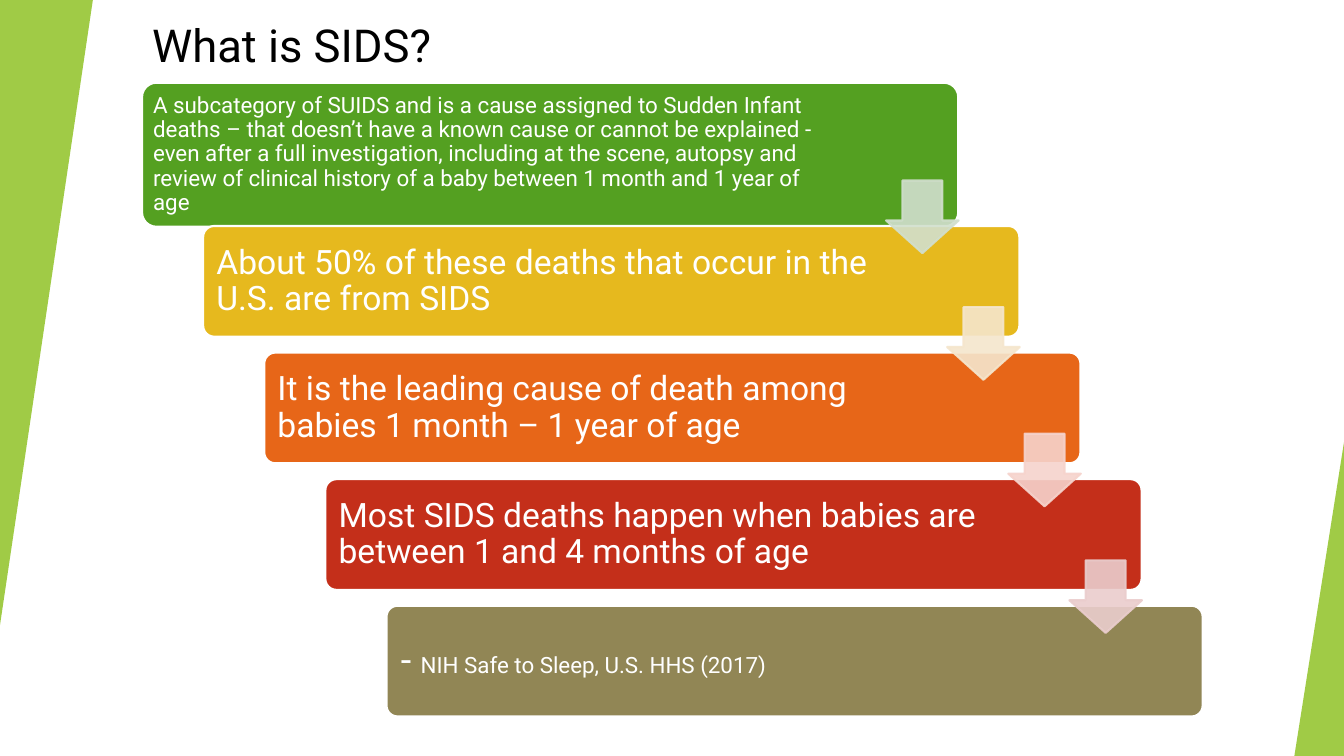
from dataclasses import dataclass

from lxml.etree import SubElement
from pptx import Presentation
from pptx.dml.color import RGBColor
from pptx.dml.fill import FillFormat
from pptx.enum.shapes import MSO_SHAPE
from pptx.enum.text import MSO_ANCHOR, MSO_AUTO_SIZE, PP_ALIGN
from pptx.oxml.ns import qn
from pptx.shapes.autoshape import Shape
from pptx.slide import Slide
from pptx.text.text import Font
from pptx.util import Cm, Pt

FONT = "Roboto"
COLORS = {
    "white": "FFFFFF", "black": "000000", "lime": "90C226",
    "green": "54A021", "gold": "E6B91E", "orange": "E76618",
    "red": "C42F1A", "olive": "918655",
    "pale green": "D1DFCD", "pale gold": "F5E6CD",
    "pale orange": "F6D3CC", "pale red": "EACDCD",
}
# Cards descend like stairs; all lengths are in cm.
LEFT, MIDDLE = 3.58, 3.9
STEP_X, STEP_Y = 1.54, 3.19
CARD_WIDTH, TEXT_WIDTH = 20.57, 17.05
ARROW_LEFT, ARROW_TOP, ARROW_SIZE = 22.33, 4.55, 1.83


@dataclass
class Card:
    color: str
    texts: list[tuple[str, float]]
    height: float = 2.79
    inset: float = 0.25


@dataclass
class Wedge:
    left: float
    top: float
    width: float
    height: float
    turn: int


CARDS = [
    Card("green", [("A subcategory of SUIDS and is a cause assigned to Sudden Infant "
                    "deaths – that doesn’t have a known cause or cannot be explained - "
                    "even after a full investigation, including at the scene, autopsy "
                    "and review of clinical history of a baby between 1 month and "
                    "1 year of age", 16)], height=3.63, inset=0.17),
    Card("gold", [("About 50% of these deaths that occur in the U.S. are from SIDS", 24)]),
    Card("orange", [("It is the leading cause of death among babies "
                     "1 month – 1 year of age", 24)]),
    Card("red", [("Most SIDS deaths happen when babies are between "
                  "1 and 4 months of age", 24)]),
    Card("olive", [("- ", 27), ("NIH Safe to Sleep, U.S. HHS (2017)", 16)], inset=0.28),
]
ARROWS = ["pale green", "pale gold", "pale orange", "pale red"]
WEDGES = [Wedge(0, 0, 2.34, 15.75, 180), Wedge(32.62, 11.15, 1.25, 7.9, 0)]


def paint(fill: FillFormat, color: str, alpha: int = 100) -> None:
    """Fill with a solid colour; alpha is the opacity in percent."""
    fill.solid()
    fill.fore_color.rgb = RGBColor.from_string(COLORS[color])
    if alpha < 100:
        node = fill._xPr.find(qn("a:solidFill"))[0]
        SubElement(node, qn("a:alpha"), val=str(alpha * 1000))


def style(font: Font, size: float, color: str) -> None:
    font.name = FONT
    font.size = Pt(size)
    font.color.rgb = RGBColor.from_string(COLORS[color])


def add_shape(slide: Slide, kind: MSO_SHAPE, box: tuple[float, ...],
              color: str, alpha: int = 100) -> Shape:
    shape = slide.shapes.add_shape(kind, *map(Cm, box))
    shape.shadow.inherit = False
    paint(shape.fill, color, alpha)
    shape.line.fill.background()
    return shape


def outline(shape: Shape, color: str, alpha: int = 100) -> None:
    shape.line.width = Pt(1.5)
    paint(shape.line.fill, color, alpha)


def add_title(slide: Slide) -> None:
    title = slide.shapes.title
    title.left, title.top, title.width, title.height = map(Cm, (3.58, 0.33, 28.32, 1.6))
    frame = title.text_frame
    frame.text = "What is SIDS?"
    frame.auto_size = MSO_AUTO_SIZE.NONE
    frame.vertical_anchor = MSO_ANCHOR.MIDDLE
    frame.paragraphs[0].alignment = PP_ALIGN.LEFT
    style(frame.paragraphs[0].runs[0].font, 32.4, "black")


def add_wedge(slide: Slide, wedge: Wedge) -> None:
    box = (wedge.left, wedge.top, wedge.width, wedge.height)
    shape = add_shape(slide, MSO_SHAPE.ISOSCELES_TRIANGLE, box, "lime", 85)
    shape.adjustments[0] = 1
    shape.rotation = wedge.turn


def add_card(slide: Slide, card: Card, index: int) -> None:
    left = LEFT + index * STEP_X
    top = MIDDLE + index * STEP_Y - card.height / 2
    shape = add_shape(slide, MSO_SHAPE.ROUNDED_RECTANGLE,
                      (left, top, CARD_WIDTH, card.height), card.color)
    shape.adjustments[0] = 0.1
    outline(shape, "white")

    pad = card.height * 0.03
    label = slide.shapes.add_textbox(Cm(left + pad), Cm(top + pad),
                                     Cm(TEXT_WIDTH), Cm(card.height - 2 * pad))
    frame = label.text_frame
    frame.word_wrap = True
    frame.vertical_anchor = MSO_ANCHOR.MIDDLE
    frame.margin_left = frame.margin_right = Cm(card.inset)
    frame.margin_top = frame.margin_bottom = Cm(card.inset)
    line = frame.paragraphs[0]
    line.line_spacing = 0.9
    for text, size in card.texts:
        run = line.add_run()
        run.text = text
        style(run.font, size, "white")


def add_arrow(slide: Slide, color: str, index: int) -> None:
    box = (ARROW_LEFT + index * STEP_X, ARROW_TOP + index * STEP_Y,
           ARROW_SIZE, ARROW_SIZE)
    arrow = add_shape(slide, MSO_SHAPE.DOWN_ARROW, box, color, 90)
    arrow.adjustments[0] = 0.55
    arrow.adjustments[1] = 0.45
    outline(arrow, color, 90)


def main() -> None:
    deck = Presentation()
    deck.slide_width, deck.slide_height = Cm(33.87), Cm(19.05)
    slide = deck.slides.add_slide(deck.slide_layouts.get_by_name("Title Only"))
    add_title(slide)
    for wedge in WEDGES:
        add_wedge(slide, wedge)
    for index, card in enumerate(CARDS):
        add_card(slide, card, index)
    for index, color in enumerate(ARROWS):
        add_arrow(slide, color, index)
    deck.save("out.pptx")


if __name__ == "__main__":
    main()
